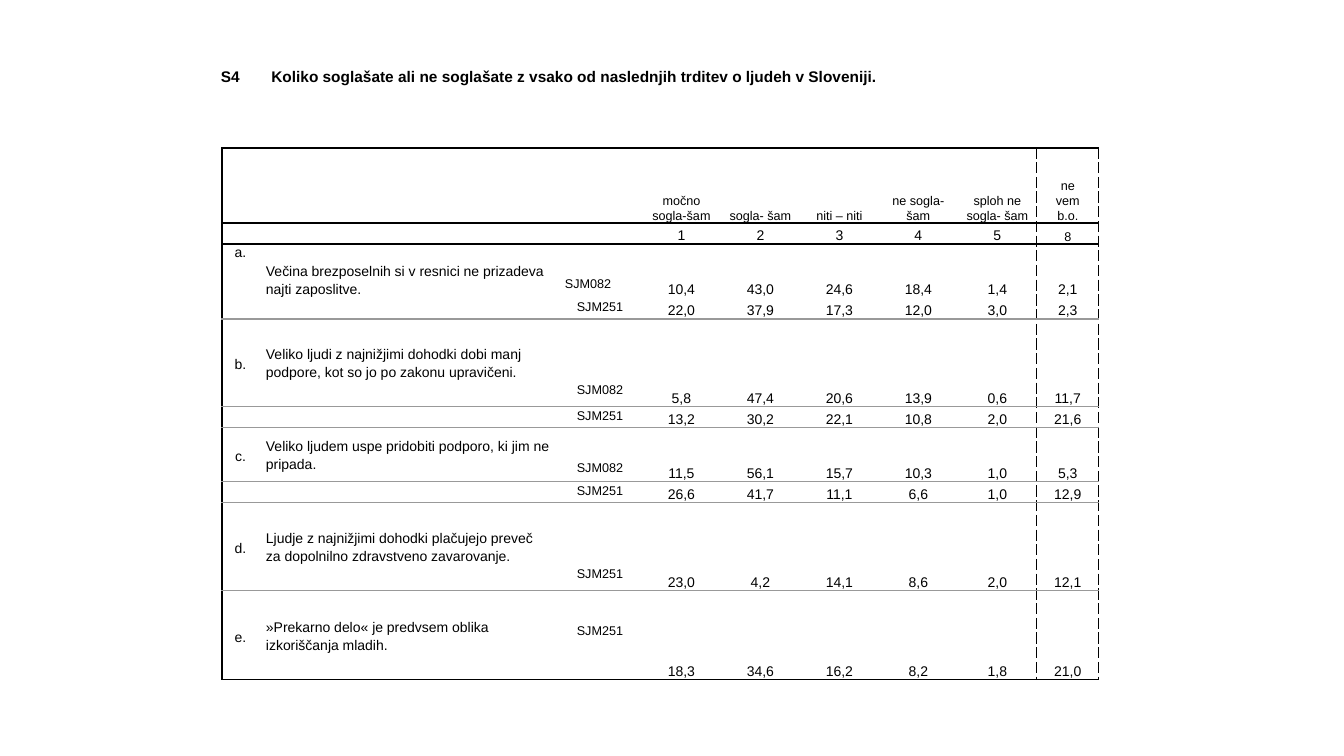
from lxml import etree
from pptx import Presentation
from pptx.dml.color import RGBColor
from pptx.enum import text
from pptx.oxml import ns
from pptx.util import Emu, Pt

# Content
TITLE = "S4\tKoliko soglašate ali ne soglašate z vsako od naslednjih trditev o ljudeh v Sloveniji."
ANSWERS = ["močno sogla-šam", "sogla- šam", "niti – niti", "ne sogla- šam",
           "sploh ne sogla- šam", "ne\nvem\nb.o."]
CODES = ["1", "2", "3", "4", "5", "8"]
# letter, statement, survey, lines the survey label is lowered by, shares in %
ROWS = [
    ("a.", "Večina brezposelnih si v resnici ne prizadeva najti zaposlitve.",
     "SJM082", 1, ["10,4", "43,0", "24,6", "18,4", "1,4", "2,1"]),
    ("", "", "SJM251", 0, ["22,0", "37,9", "17,3", "12,0", "3,0", "2,3"]),
    ("b.", "Veliko ljudi z najnižjimi dohodki dobi manj podpore, kot so jo po zakonu upravičeni.",
     "SJM082", 2, ["5,8", "47,4", "20,6", "13,9", "0,6", "11,7"]),
    ("", "", "SJM251", 0, ["13,2", "30,2", "22,1", "10,8", "2,0", "21,6"]),
    ("c.", "Veliko ljudem uspe pridobiti podporo, ki jim ne pripada.",
     "SJM082", 1, ["11,5", "56,1", "15,7", "10,3", "1,0", "5,3"]),
    ("", "", "SJM251", 0, ["26,6", "41,7", "11,1", "6,6", "1,0", "12,9"]),
    ("d.", "Ljudje z najnižjimi dohodki plačujejo preveč za dopolnilno zdravstveno zavarovanje.",
     "SJM251", 2, ["23,0", "4,2", "14,1", "8,6", "2,0", "12,1"]),
    ("e.", "»Prekarno delo« je predvsem oblika izkoriščanja mladih.",
     "SJM251", 1, ["18,3", "34,6", "16,2", "8,2", "1,8", "21,0"]),
]

# Layout in px
SLIDE_W, SLIDE_H = 1344, 756
SCALE = 12192000 / SLIDE_W
TITLE_BOX = (211, 62, 889, 29)
TABLE_LEFT, TABLE_TOP = 222, 148
COL_W = [37, 299, 84] + [79] * 5 + [62]
ROW_H = [75, 21, 54, 21, 88, 21, 54, 21, 88, 89]
SIDE_MARGIN, LETTER_LINE, LABEL_LINE = 7, 17, 31

COLORS = {"ink": "000000", "rule": "999999"}
FONT = "Arial"
# Colour of each horizontal rule, top to bottom; none inside statement a
H_RULES = ["ink"] * 3 + [None] + ["rule"] * 6 + ["ink"]
# Colour and dash of each vertical rule, by column edge
V_RULES = {0: ("ink", "solid"), 8: ("ink", "dash"), 9: ("ink", "dash")}
NO_STYLE = "{2D5ABB26-0587-4C30-8999-92F81FD0307C}"

LEFT, CENTER = text.PP_ALIGN.LEFT, text.PP_ALIGN.CENTER
TOP, MIDDLE, BOTTOM = (text.MSO_ANCHOR.TOP, text.MSO_ANCHOR.MIDDLE,
                       text.MSO_ANCHOR.BOTTOM)


def px(n):
    return Emu(round(n * SCALE))


def set_font(font, size, bold=False):
    for key, value in {"name": FONT, "size": Pt(size), "bold": bold}.items():
        setattr(font, key, value)
    font.color.rgb = RGBColor.from_string(COLORS["ink"])


def add_rule(props, position, side, color, dash):
    line = etree.Element(ns.qn("a:ln" + side), w=str(Pt(1)))
    if color:
        fill = etree.SubElement(line, ns.qn("a:solidFill"))
        etree.SubElement(fill, ns.qn("a:srgbClr"), val=COLORS[color])
        etree.SubElement(line, ns.qn("a:prstDash"), val=dash)
    else:
        etree.SubElement(line, ns.qn("a:noFill"))
    props.insert(position, line)


def fill_cell(row, col, words="", size=10, spacing=1.07, align=CENTER,
              anchor=BOTTOM, above=0, below=0):
    cell = grid.cell(row, col)
    cell.fill.background()
    settings = {"margin_left": px(SIDE_MARGIN), "margin_right": px(SIDE_MARGIN),
                "margin_top": px(above), "margin_bottom": px(below),
                "vertical_anchor": anchor}
    for key, value in settings.items():
        setattr(cell, key, value)
    cell.text_frame.text = words
    for paragraph in cell.text_frame.paragraphs:
        paragraph.alignment, paragraph.line_spacing = align, spacing
        for run in paragraph.runs:
            set_font(run.font, size)
        if not words:  # keeps an empty cell from stretching its row
            etree.SubElement(paragraph._p, ns.qn("a:endParaRPr"), sz="900")
    rules = [("L", *V_RULES.get(col, (None, None))),
             ("R", *V_RULES.get(col + 1, (None, None))),
             ("T", H_RULES[row], "solid"), ("B", H_RULES[row + 1], "solid")]
    for position, rule in enumerate(rules):
        add_rule(cell._tc.get_or_add_tcPr(), position, *rule)


deck = Presentation()
deck.slide_width, deck.slide_height = px(SLIDE_W), px(SLIDE_H)
slide = deck.slides.add_slide(deck.slide_layouts[6])

# Empty grid
grid = slide.shapes.add_table(
    len(ROW_H), len(COL_W), px(TABLE_LEFT), px(TABLE_TOP),
    px(sum(COL_W)), px(sum(ROW_H))).table
grid.first_row = grid.horz_banding = False
grid._tbl.tblPr.find(ns.qn("a:tableStyleId")).text = NO_STYLE
for column, width in zip(grid.columns, COL_W):
    column.width = px(width)
for band, height in zip(grid.rows, ROW_H):
    band.height = px(height)

# Two heading rows
for row, headings in enumerate([ANSWERS, CODES]):
    for col in range(3):
        fill_cell(row, col)
    for col, heading in enumerate(headings, 3):
        small = row == 0 or heading == "8"
        fill_cell(row, col, heading, size=9 if small else 10)

# Statements with their shares
for row, (letter, statement, survey, drop, shares) in enumerate(ROWS, 2):
    first = letter == "a."
    lift = 0 if first or not letter else LETTER_LINE * (1 if letter == "c." else 2)
    fill_cell(row, 0, letter, anchor=TOP if first else BOTTOM, below=lift)
    fill_cell(row, 1, statement, spacing=1.15, align=LEFT,
              anchor=BOTTOM if first else MIDDLE)
    fill_cell(row, 2, survey, size=9, spacing=1.15, anchor=TOP,
              align=LEFT if first else CENTER, above=drop * LABEL_LINE)
    for col, share in enumerate(shares, 3):
        fill_cell(row, col, share, spacing=1.15)

# Title
title = slide.shapes.add_textbox(*map(px, TITLE_BOX)).text_frame
title.word_wrap = True
title.text = TITLE
set_font(title.paragraphs[0].runs[0].font, 11, bold=True)

deck.save("out.pptx")
